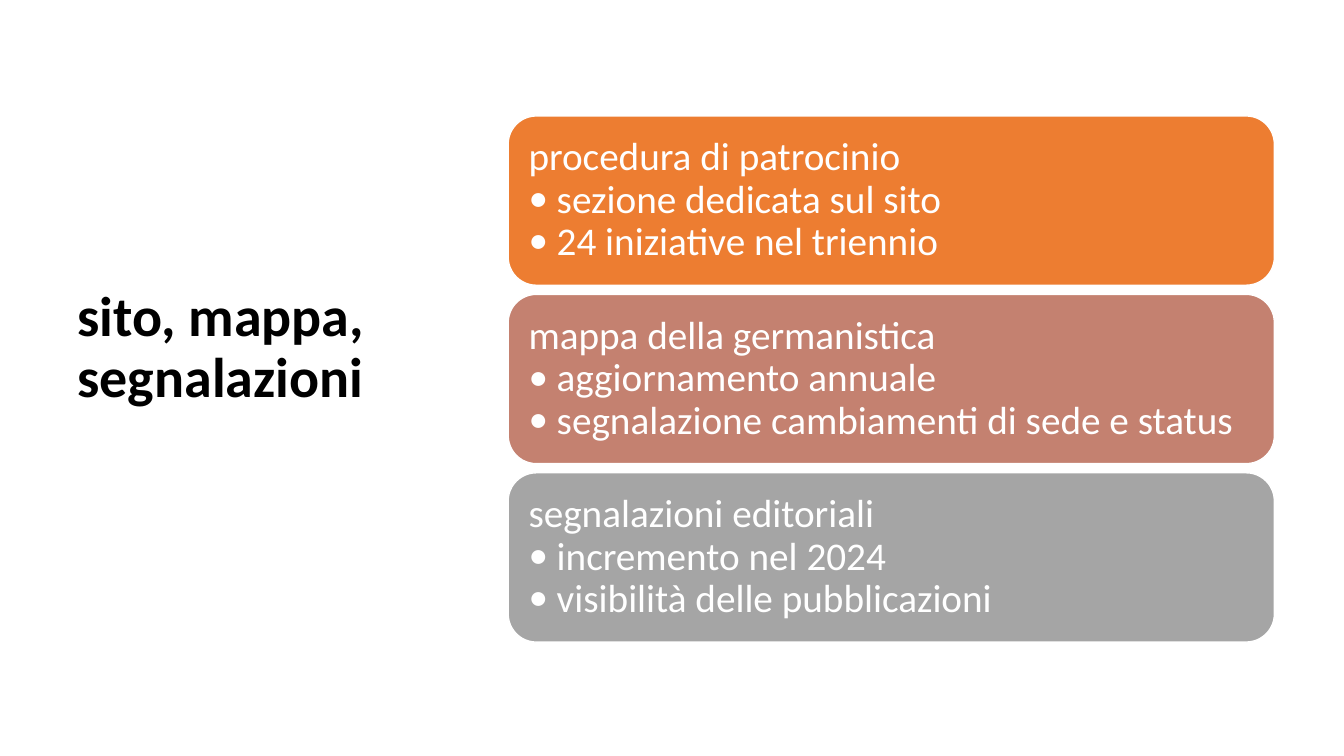
from dataclasses import dataclass

from lxml.etree import SubElement
from pptx import Presentation
from pptx.dml.color import RGBColor
from pptx.enum.shapes import MSO_SHAPE as Shape
from pptx.enum.text import MSO_ANCHOR as Anchor, PP_ALIGN as Align
from pptx.oxml.ns import qn
from pptx.util import Pt

PX = 9144  # EMU per px, 100 px to the inch
FONT = "Calibri"
WHITE, BLACK = "FFFFFF", "000000"
CARD_LEFT, CARD_TOP, CARD_W, CARD_H, CARD_PITCH = 504, 115, 760, 168, 177
CARD_INSET, BULLET_INDENT = 12, 28


@dataclass(frozen=True)
class Card:
    heading: str
    points: tuple[str, ...]
    fill: str


CARDS = [
    Card("procedura di patrocinio",
         ("sezione dedicata sul sito", "24 iniziative nel triennio"), "ED7D31"),
    Card("mappa della germanistica",
         ("aggiornamento annuale", "segnalazione cambiamenti di sede e status"), "C48170"),
    Card("segnalazioni editoriali",
         ("incremento nel 2024", "visibilità delle pubblicazioni"), "A5A5A5"),
]


def px(n: int) -> int:
    return n * PX


def rgb(value: str) -> RGBColor:
    return RGBColor.from_string(value)


def format_paragraph(p, size: int, color: str, bold: bool = False) -> None:
    p.alignment = Align.LEFT
    p.line_spacing = 0.9
    for r in p.runs:
        r.font.name = FONT
        r.font.size = Pt(size)
        r.font.bold = bold
        r.font.color.rgb = rgb(color)


def add_bullet(p) -> None:
    """Give the paragraph a round bullet with a hanging indent."""
    props = p._p.get_or_add_pPr()
    props.set("marL", str(px(BULLET_INDENT)))
    props.set("indent", str(px(-BULLET_INDENT)))
    SubElement(props, qn("a:buFont"), typeface=FONT)
    SubElement(props, qn("a:buChar"), char="•")


def draw_title(slide, text: str) -> None:
    sp = slide.shapes.add_textbox(px(67), px(60), px(382), px(633))
    tf = sp.text_frame
    tf.word_wrap = True
    tf.vertical_anchor = Anchor.MIDDLE
    tf.margin_bottom = px(66)
    tf.text = text
    format_paragraph(tf.paragraphs[0], 40, BLACK, bold=True)


def draw_card(slide, card: Card, top: int) -> None:
    sp = slide.shapes.add_shape(
        Shape.ROUNDED_RECTANGLE, px(CARD_LEFT), px(top), px(CARD_W), px(CARD_H))
    sp.shadow.inherit = False
    sp.fill.solid()
    sp.fill.fore_color.rgb = rgb(card.fill)
    sp.line.color.rgb = rgb(WHITE)
    sp.line.width = Pt(1)
    tf = sp.text_frame
    tf.word_wrap = True
    tf.vertical_anchor = Anchor.MIDDLE
    tf.margin_left = tf.margin_right = px(CARD_INSET)
    tf.margin_top = tf.margin_bottom = px(CARD_INSET)
    tf.text = "\n".join((card.heading, *card.points))
    for p in tf.paragraphs:
        format_paragraph(p, 28, WHITE)
    for p in tf.paragraphs[1:]:
        add_bullet(p)


def main() -> None:
    prs = Presentation()
    prs.slide_width, prs.slide_height = px(1333), px(750)
    slide = prs.slides.add_slide(prs.slide_layouts[6])
    draw_title(slide, "sito, mappa, segnalazioni")
    for i, card in enumerate(CARDS):
        draw_card(slide, card, CARD_TOP + i * CARD_PITCH)
    prs.save("out.pptx")


if __name__ == "__main__":
    main()
